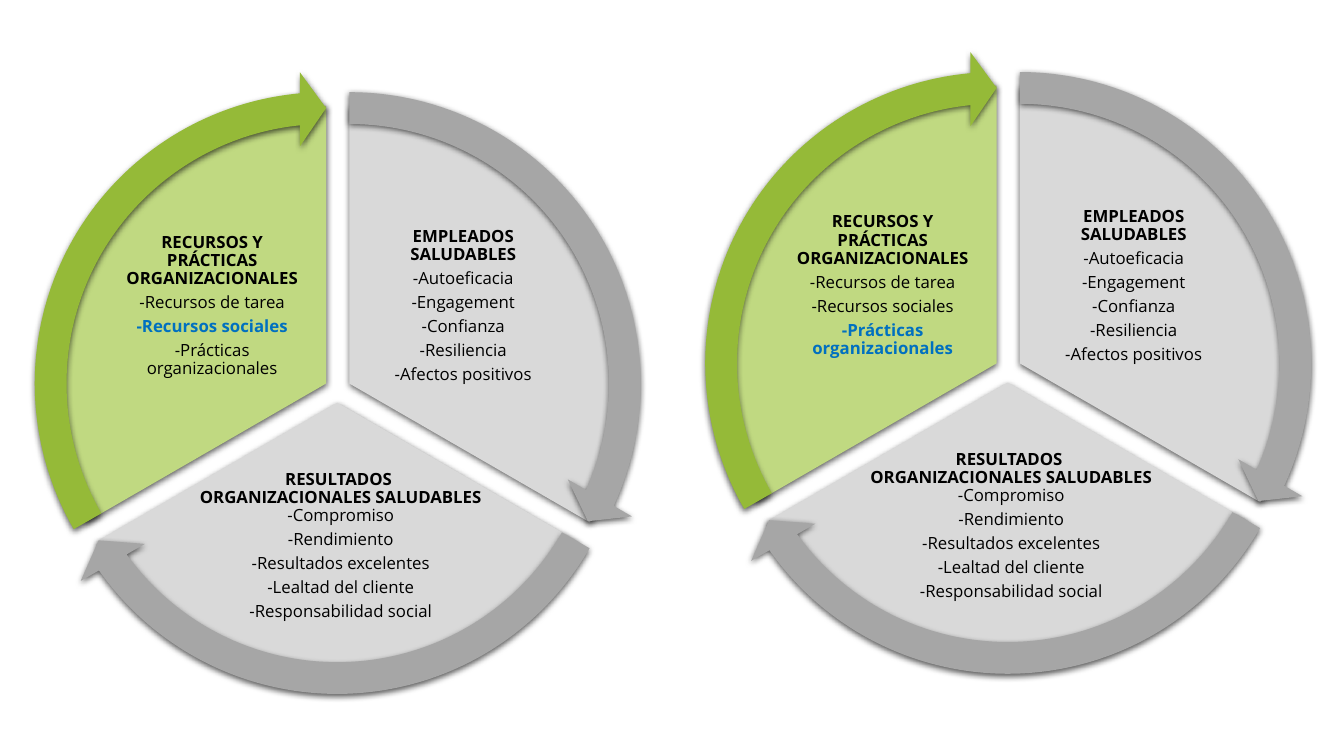
"""Builds a slide with two three-part cycles of a healthy organization."""
from math import cos, radians, sin, tan

from lxml.etree import SubElement
from pptx import Presentation
from pptx.dml.color import RGBColor as RGB
from pptx.enum.shapes import MSO_SHAPE as Kind
from pptx.enum.text import MSO_ANCHOR as Anchor, PP_ALIGN as Align
from pptx.oxml.ns import qn
from pptx.util import Inches, Pt

FONT = "Open Sans"
HEX = {"gray": "D9D9D9", "dark gray": "A6A6A6", "lime": "C0D981",
       "green": "95BA38", "blue": "0070C0", "black": "000000"}
PARTS = [
    {"heads": ["EMPLEADOS SALUDABLES"], "gap": 4.2,
     "items": ["-Autoeficacia", "-Engagement", "-Confianza", "-Resiliencia",
               "-Afectos positivos"],
     "at": (0.71, 1.05), "start": -90, "inset": (2.92, 1.18, 0.66, 2.72),
     "fill": "gray", "arrow": "dark gray"},
    {"heads": ["RESULTADOS ", "ORGANIZACIONALES SALUDABLES"], "gap": 0,
     "items": ["-Compromiso", "-Rendimiento", "-Resultados excelentes",
               "-Lealtad del cliente", "-Responsabilidad social"],
     "at": (0.59, 1.24), "start": 30, "inset": (1.33, 3.59, 1.26, 0.74),
     "fill": "gray", "arrow": "dark gray"},
    {"heads": ["RECURSOS Y PRÁCTICAS ORGANIZACIONALES"], "gap": 4.2,
     "items": ["-Recursos de tarea", "-Recursos sociales",
               "-Prácticas organizacionales"],
     "at": (0.48, 1.05), "start": 150, "inset": (0.66, 1.18, 2.92, 2.72),
     "fill": "lime", "arrow": "green"},
]
WHEELS = [((0, 0), "-Recursos sociales"),
          ((6.65, -0.2), "-Prácticas organizacionales")]
DISC, RING = 5.51, 6.2
BAND, TIP, HEAD, SWEEP = 5.09, 5.93, 5.46, 114.54


def style(shape, color):
    """Give a shape its fill and soft shadow, without an outline."""
    shape.fill.solid()
    shape.fill.fore_color.rgb = RGB.from_string(HEX[color])
    shape.line.fill.background()
    shape.shadow.inherit = False
    glow = SubElement(shape._element.spPr.find(qn("a:effectLst")),
                      qn("a:outerShdw"), blurRad="57150", dist="19050",
                      dir="5400000", algn="ctr", rotWithShape="0")
    tint = SubElement(glow, qn("a:srgbClr"), val=HEX["black"])
    SubElement(tint, qn("a:alpha"), val="63000")


def write(shape, part, key):
    """Write the heads and items, with the key item in blue."""
    frame = shape.text_frame
    frame.word_wrap = True
    frame.vertical_anchor = Anchor.MIDDLE
    (frame.margin_left, frame.margin_top, frame.margin_right,
     frame.margin_bottom) = map(Inches, part["inset"])
    heads = part["heads"]
    for n, line in enumerate(heads + part["items"]):
        para = frame.add_paragraph() if n else frame.paragraphs[0]
        para.text = line
        para.alignment = Align.CENTER
        para.line_spacing = 0.9
        para.space_before = Pt(0)
        para.space_after = Pt(part["gap"] if n < len(heads) else 4.2)
        font = para.runs[0].font
        font.name, font.size = FONT, Pt(12)
        font.bold = n < len(heads) or line == key
        font.color.rgb = RGB.from_string(HEX["blue" if line == key else "black"])


def trace(start):
    """List the steps around a third of a disc, as two curves and two lines."""
    mid = DISC / 2
    pull = 4 / 3 * tan(radians(15))

    def rim(turn, lean=0):
        """Find a rim point, moved along its tangent by lean."""
        t = radians(turn)
        return (mid + mid * (cos(t) - lean * sin(t)),
                mid + mid * (sin(t) + lean * cos(t)))

    curves = [("cubicBezTo", [rim(a, pull), rim(a + 60, -pull), rim(a + 60)])
              for a in (start, start + 60)]
    return [("moveTo", [rim(start)]), *curves, ("lnTo", [(mid, mid)]),
            ("lnTo", [rim(start)]), ("close", [])]


def wedge(shapes, x, y, part, key):
    """Draw a third of a disc in the disc's box, with its text."""
    pen = shapes.build_freeform(Inches(x), Inches(y))
    pen.add_line_segments([(Inches(x + DISC), Inches(y + DISC))])
    shape = pen.convert_to_shape()
    route = shape._element.spPr.find(".//" + qn("a:path"))
    for node in list(route):
        route.remove(node)
    for name, spots in trace(part["start"]):
        node = SubElement(route, qn("a:" + name))
        for across, down in spots:
            SubElement(node, qn("a:pt"), x=str(Inches(across)),
                       y=str(Inches(down)))
    style(shape, part["fill"])
    write(shape, part, key)


def arrow(shapes, x, y, part):
    """Draw the curved arrow along the rim of a part."""
    edge = (RING - DISC) / 2
    shape = shapes.add_shape(Kind.CIRCULAR_ARROW, Inches(x - edge),
                             Inches(y - edge), Inches(RING), Inches(RING))
    start = part["start"] % 360
    end = (start + SWEEP) % 360
    sizes = (BAND / 100, HEAD * 0.6, end * 0.6, start * 0.6, TIP / 100)
    for n, value in enumerate(sizes):
        shape.adjustments[n] = value
    style(shape, part["arrow"])


def main():
    """Build and save the slide."""
    deck = Presentation()
    deck.slide_width, deck.slide_height = Inches(13.33), Inches(7.5)
    shapes = deck.slides.add_slide(deck.slide_layouts[6]).shapes
    for (dx, dy), key in WHEELS:
        spots = [(p["at"][0] + dx, p["at"][1] + dy, p) for p in PARTS]
        for spot in spots:
            wedge(shapes, *spot, key)
        for spot in spots:
            arrow(shapes, *spot)
    deck.save("out.pptx")


if __name__ == "__main__":
    main()
